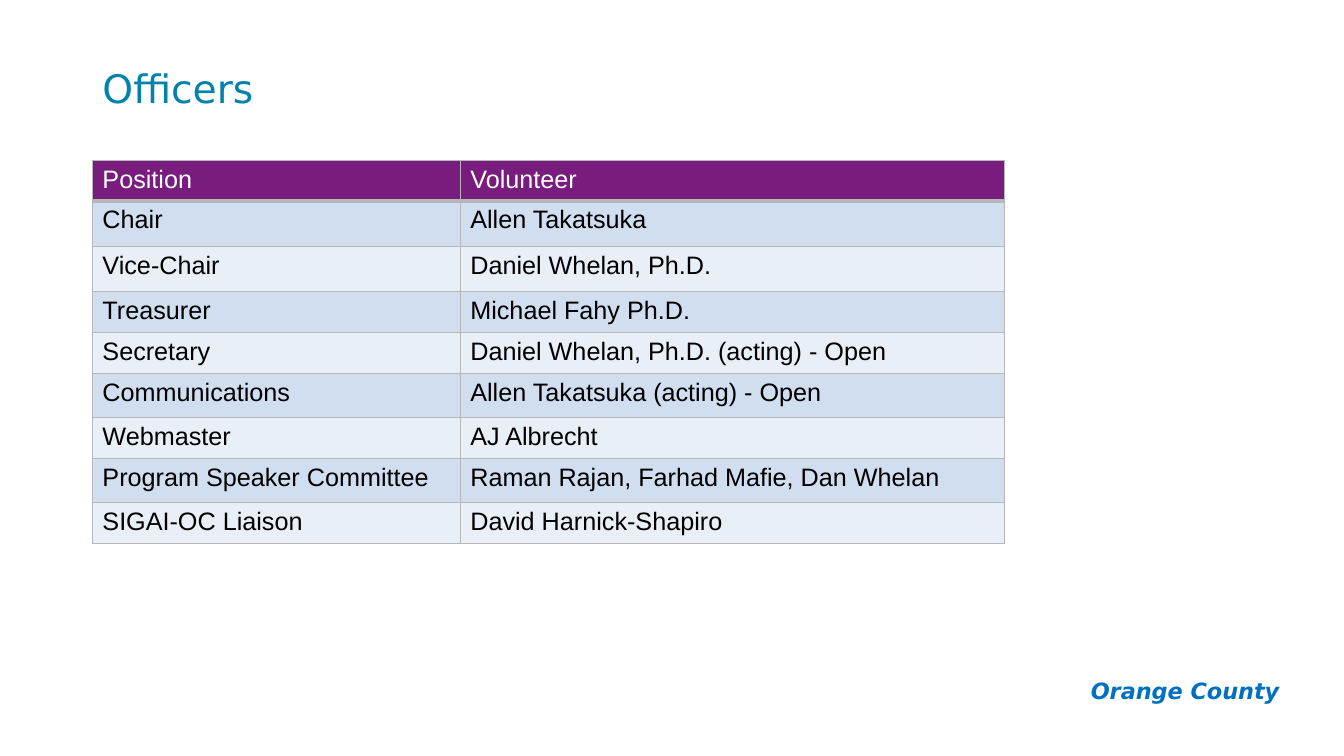
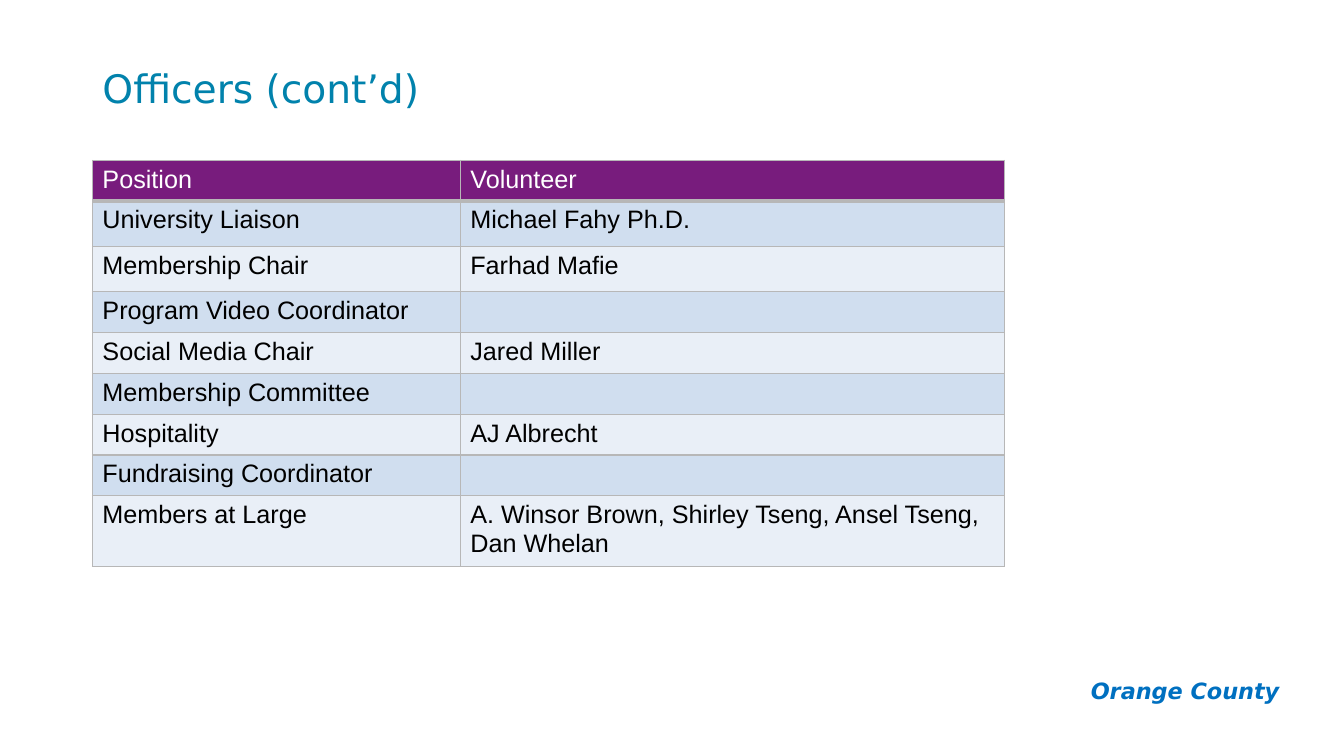
from lxml.etree import SubElement
from pptx import Presentation
from pptx.dml.color import RGBColor
from pptx.enum.text import MSO_ANCHOR, MSO_AUTO_SIZE, PP_ALIGN
from pptx.oxml import parse_xml
from pptx.oxml.ns import nsdecls, qn
from pptx.util import Inches, Pt

TEAL = RGBColor(0x01, 0x82, 0xAC)
BLUE = RGBColor(0x00, 0x70, 0xC0)
PURPLE = RGBColor(0x78, 0x1C, 0x7D)
WHITE = RGBColor(0xFF, 0xFF, 0xFF)
BLACK = RGBColor(0x00, 0x00, 0x00)
GREY = RGBColor(0xB7, 0xB7, 0xB7)
BANDS = (RGBColor(0xD0, 0xDE, 0xEF), RGBColor(0xE9, 0xEF, 0xF7))

HEADING_FONT = "DejaVu Sans"
TABLE_FONT = "Arial"
TITLE_ONLY = 5

# The slide is a grid of 160 columns by 90 rows.
COLUMNS, ROWS = 160, 90
LEFT_MARGIN = 11
TITLE_BOX = (LEFT_MARGIN, 4.8, 138, 11.9)
CHAPTER_BOX = (126.1, 79.4, 27.4, 5.6)
TABLE_TOP = 19.1
TABLE_COLUMNS = (43.8, 64.8)
HEADER_ROW, TALL_ROW, MEDIUM_ROW, ROW = 4.3, 5.4, 5.25, 4.87

HEADINGS = ("Position", "Volunteer")
OFFICERS = [
    ("Chair", "Allen Takatsuka", TALL_ROW),
    ("Vice-Chair", "Daniel Whelan, Ph.D.", TALL_ROW),
    ("Treasurer", "Michael Fahy Ph.D.", ROW),
    ("Secretary", "Daniel Whelan, Ph.D. (acting) - Open", ROW),
    ("Communications", "Allen Takatsuka (acting) - Open", MEDIUM_ROW),
    ("Webmaster", "AJ Albrecht", ROW),
    ("Program Speaker Committee", "Raman Rajan, Farhad Mafie, Dan Whelan", MEDIUM_ROW),
    ("SIGAI-OC Liaison", "David Harnick-Shapiro", ROW),
]
MORE_OFFICERS = [
    ("University Liaison", "Michael Fahy Ph.D.", TALL_ROW),
    ("Membership Chair", "Farhad Mafie", TALL_ROW),
    ("Program Video Coordinator", "", ROW),
    ("Social Media Chair", "Jared Miller", ROW),
    ("Membership Committee", "", ROW),
    ("Hospitality", "AJ Albrecht", ROW),
    ("Fundraising Coordinator", "", ROW),
    ("Members at Large", "A. Winsor Brown, Shirley Tseng, Ansel Tseng, Dan Whelan", ROW),
]


def style_font(paragraph, name, size, color, bold=False, italic=False):
    font = paragraph.font
    font.name, font.size = name, Pt(size)
    font.bold, font.italic = bold, italic
    font.color.rgb = color


def draw_borders(cell, top=1, bottom=1):
    """Outline a filled cell; the widths are in points."""
    properties = cell._tc.get_or_add_tcPr()
    widths = {"lnL": 1, "lnR": 1, "lnT": top, "lnB": bottom}
    for position, (side, width) in enumerate(widths.items()):
        line = parse_xml(f'<a:{side} {nsdecls("a")} w="{Pt(width)}"/>')
        fill = SubElement(line, qn("a:solidFill"))
        SubElement(fill, qn("a:srgbClr"), val=str(GREY))
        properties.insert(position, line)


class Deck:
    """Holds the shared style and the slide being built."""

    def __init__(self):
        self.presentation = Presentation()
        self.presentation.slide_width = Inches(13.333)
        self.presentation.slide_height = Inches(7.5)
        self.slide = None

    def across(self, columns):
        return round(self.presentation.slide_width * columns / COLUMNS)

    def down(self, rows):
        return round(self.presentation.slide_height * rows / ROWS)

    def box(self, left, top, width, height):
        return self.across(left), self.down(top), self.across(width), self.down(height)

    def add_slide(self, title):
        layout = self.presentation.slide_layouts[TITLE_ONLY]
        self.slide = self.presentation.slides.add_slide(layout)
        self.add_chapter_name()
        self.set_title(title)

    def add_chapter_name(self):
        frame = self.slide.shapes.add_textbox(*self.box(*CHAPTER_BOX)).text_frame
        frame.word_wrap = True
        frame.margin_top = frame.margin_bottom = Inches(0.1)
        chapter = frame.paragraphs[0]
        chapter.text = "Orange County"
        chapter.alignment = PP_ALIGN.RIGHT
        style_font(chapter, HEADING_FONT, 16, BLUE, bold=True, italic=True)

    def set_title(self, text):
        title = self.slide.shapes.title
        title.left, title.top, title.width, title.height = self.box(*TITLE_BOX)
        frame = title.text_frame
        frame.auto_size = MSO_AUTO_SIZE.NONE
        frame.vertical_anchor = MSO_ANCHOR.MIDDLE
        heading = frame.paragraphs[0]
        heading.text = text
        heading.alignment = PP_ALIGN.LEFT
        heading.line_spacing = 0.9
        style_font(heading, HEADING_FONT, 28, TEAL)

    def add_officer_table(self, officers):
        lines = [(*HEADINGS, HEADER_ROW), *officers]
        height = sum(line[-1] for line in lines)
        area = self.box(LEFT_MARGIN, TABLE_TOP, sum(TABLE_COLUMNS), height)
        table = self.slide.shapes.add_table(len(lines), len(HEADINGS), *area).table
        table.horz_banding = False
        for column, width in zip(table.columns, TABLE_COLUMNS):
            column.width = self.across(width)
        for index, (*texts, row_height) in enumerate(lines):
            table.rows[index].height = self.down(row_height)
            for cell, text in zip(table.rows[index].cells, texts):
                self.fill_cell(cell, text, index)

    def fill_cell(self, cell, text, row):
        is_header = row == 0
        cell.fill.solid()
        cell.fill.fore_color.rgb = PURPLE if is_header else BANDS[(row - 1) % 2]
        draw_borders(cell, top=3 if row == 1 else 1, bottom=3 if is_header else 1)
        entry = cell.text_frame.paragraphs[0]
        entry.text = text
        style_font(entry, TABLE_FONT, 18, WHITE if is_header else BLACK)


def main():
    deck = Deck()
    for title, officers in (("Officers", OFFICERS), ("Officers (cont’d)", MORE_OFFICERS)):
        deck.add_slide(title)
        deck.add_officer_table(officers)
    deck.presentation.save("out.pptx")


if __name__ == "__main__":
    main()
